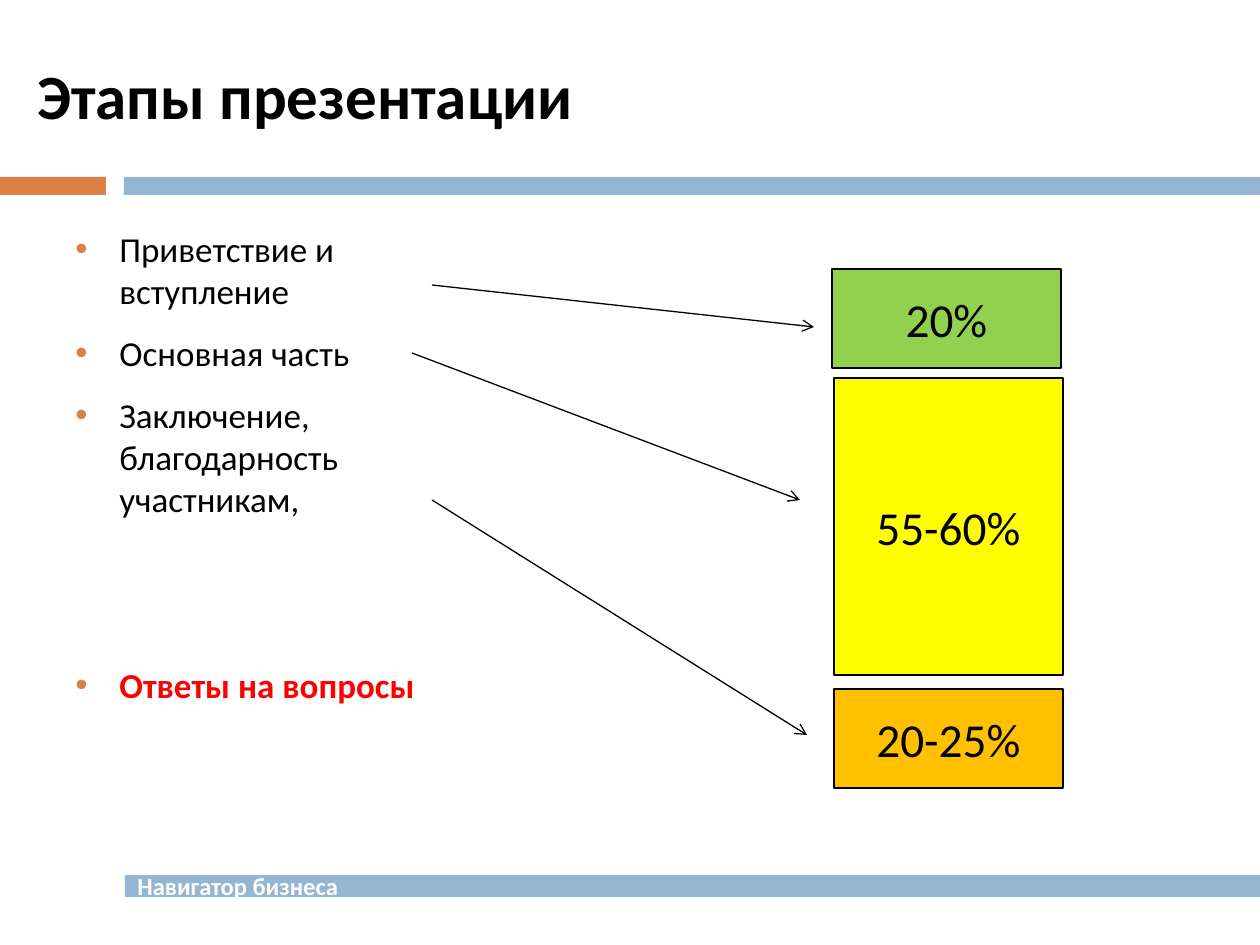
from pptx import Presentation
from pptx.dml.color import RGBColor as Rgb
from pptx.enum.shapes import MSO_CONNECTOR as Conn, MSO_SHAPE as Form
from pptx.enum.text import MSO_ANCHOR as Anchor, PP_ALIGN as Align
from pptx.oxml.ns import qn
from pptx.util import Pt
from lxml.etree import SubElement as Sub

THEME = {
    "font": "Calibri",
    "black": "000000", "white": "FFFFFF", "red": "FF0000",
    "blue": "94B6D2", "rust": "DD8047",
    "green": "92D050", "yellow": "FFFF00", "amber": "FFC000",
    "title": 36, "list": 20, "share": 27, "foot": 14, "line": 0.75,
}


def px(n):
    return round(n * 914400 / 126)


def put(obj, vals):
    for key, val in vals.items():
        setattr(obj, key, val)


def style(para, size, color="black", bold=False):
    for run in para.runs:
        put(run.font, {"name": THEME["font"], "size": Pt(THEME[size]), "bold": bold})
        run.font.color.rgb = Rgb.from_string(THEME[color])


def rect(slide, box, fill, line=None):
    shape = slide.shapes.add_shape(Form.RECTANGLE, *map(px, box))
    shape.shadow.inherit = False
    shape.fill.solid()
    shape.fill.fore_color.rgb = Rgb.from_string(THEME[fill])
    if line:
        shape.line.color.rgb = Rgb.from_string(THEME[line])
        shape.line.width = Pt(THEME["line"])
    else:
        shape.line.fill.background()
    return shape


def label(shape, text, size, color="black", bold=False, align=Align.LEFT):
    frame = shape.text_frame
    put(frame, {"word_wrap": True, "vertical_anchor": Anchor.MIDDLE})
    para = frame.paragraphs[0]
    put(para, {"text": text, "alignment": align})
    style(para, size, color, bold)


def head(slide, box, text):
    x, y, w, h = box
    title = slide.shapes.add_textbox(px(x + 25), px(y + 26), px(1124), px(136))
    label(title, text, "title", bold=True)
    rect(slide, (x, y + h - 18, 106, 18), "rust")
    rect(slide, (x + 124, y + h - 18, w - 124, 18), "blue")


def foot(slide, box, text):
    label(rect(slide, box, "blue"), text, "foot", "white", True)


def bullets(slide, box, items):
    frame = slide.shapes.add_textbox(*map(px, box)).text_frame
    frame.word_wrap = True
    for i, (text, gap, color, bold) in enumerate(items):
        para = frame.add_paragraph() if i else frame.paragraphs[0]
        put(para, {"text": text, "space_before": Pt(gap)})
        props = para._p.get_or_add_pPr()
        props.set("marL", str(px(44)))
        props.set("indent", str(px(-44)))
        Sub(Sub(props, qn("a:buClr")), qn("a:srgbClr")).set("val", THEME["rust"])
        Sub(props, qn("a:buFont")).set("typeface", "Arial")
        Sub(props, qn("a:buChar")).set("char", "•")
        style(para, "list", color, bold)


def arrow(slide, start, end):
    line = slide.shapes.add_connector(Conn.STRAIGHT, *map(px, start + end))
    line.line.color.rgb = Rgb.from_string(THEME["black"])
    line.line.width = Pt(THEME["line"])
    Sub(line.line._get_or_add_ln(), qn("a:tailEnd")).set("type", "arrow")
    Sub(line._element.spPr, qn("a:effectLst"))


def shares(slide, box, parts):
    x, y, w, _ = box
    for text, fill, dx, dy, h, start, end in parts:
        block = rect(slide, (x + dx, y + dy, w, h), fill, "black")
        label(block, text, "share", align=Align.CENTER)
        arrow(slide, start, end)


def main():
    deck = Presentation()
    put(deck, {"slide_width": px(1260), "slide_height": px(945)})
    slide = deck.slides.add_slide(deck.slide_layouts[6])
    head(slide, (0, 0, 1260, 195), "Этапы презентации")
    foot(slide, (125, 875, 1135, 22), "Навигатор бизнеса")
    bullets(slide, (63, 221, 404, 624), [
        ("Приветствие и вступление", 0, "black", False),
        ("Основная часть", 11.5, "black", False),
        ("Заключение, благодарность\vучастникам,", 11.5, "black", False),
        ("Ответы на вопросы", 82.5, "red", True),
    ])
    shares(slide, (832, 269, 229, 519), [
        ("20%", "green", 0, 0, 99, (432, 285), (814, 327)),
        ("55-60%", "yellow", 2, 109, 297, (412, 353), (800, 500)),
        ("20-25%", "amber", 2, 420, 99, (432, 500), (807, 735)),
    ])
    deck.save("out.pptx")


if __name__ == "__main__":
    main()
